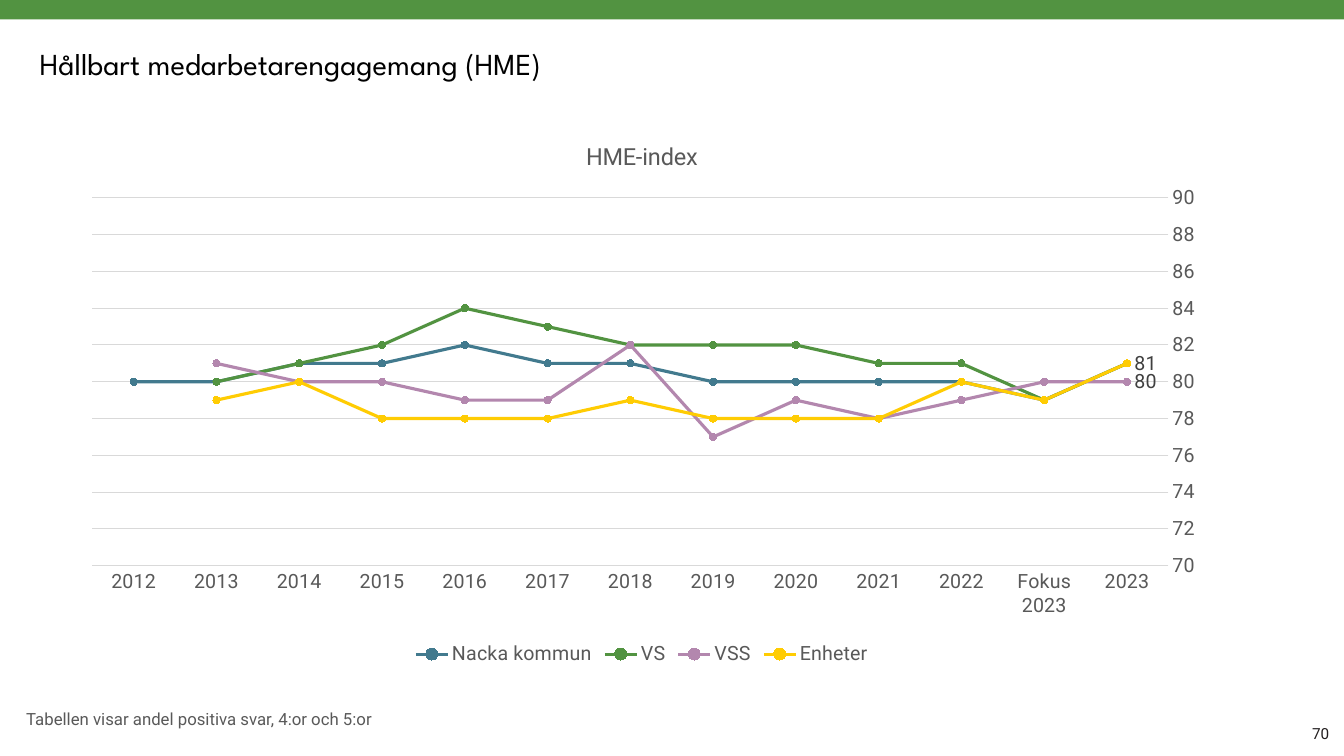
from pptx import Presentation
from pptx.chart.data import CategoryChartData
from pptx.dml.color import RGBColor
from pptx.enum.chart import (XL_CHART_TYPE, XL_LABEL_POSITION, XL_LEGEND_POSITION,
                             XL_MARKER_STYLE, XL_TICK_MARK)
from pptx.enum.shapes import MSO_SHAPE
from pptx.enum.text import MSO_ANCHOR, PP_ALIGN
from pptx.oxml import parse_xml
from pptx.oxml.ns import nsdecls
from pptx.util import Cm, Pt

COLORS = {
    "green": "529341", "blue": "427A8E", "purple": "B387AE", "yellow": "FFCC03",
    "black": "000000", "ink": "231F20", "label": "404040", "gray": "595959",
    "grid": "D9D9D9",
}
YEARS = ["2023", "Fokus 2023", *(str(year) for year in range(2022, 2011, -1))]
HME_INDEX = [
    ("Nacka kommun", "blue", [81, 79, 80, 80, 80, 80, 81, 81, 82, 81, 81, 80, 80], False),
    ("VS", "green", [81, 79, 81, 81, 82, 82, 82, 83, 84, 82, 81, 80, None], False),
    ("VSS", "purple", [80, 80, 79, 78, 79, 77, 82, 79, 79, 80, 80, 81, None], True),
    ("Enheter", "yellow", [81, 79, 80, 78, 78, 78, 79, 78, 78, 78, 80, 79, None], True),
]


class SlideBuilder:
    body_font = "Roboto"
    heading_font = "League Spartan"

    def __init__(self, slide):
        self.slide = slide

    def color(self, name):
        return RGBColor.from_string(COLORS[name])

    def style(self, font, size, color, name=None):
        font.name = name or self.body_font
        font.size = Pt(size)
        font.bold = False
        font.color.rgb = self.color(color)

    def band(self, box, color):
        band = self.slide.shapes.add_shape(MSO_SHAPE.RECTANGLE, *map(Cm, box))
        band.shadow.inherit = False
        band.fill.solid()
        band.fill.fore_color.rgb = self.color(color)
        band.line.fill.background()

    def text(self, box, words, size, color, font=None, align=PP_ALIGN.LEFT,
             anchor=MSO_ANCHOR.TOP, inset=(0, 0)):
        frame = self.slide.shapes.add_textbox(*map(Cm, box)).text_frame
        frame.word_wrap = True
        frame.vertical_anchor = anchor
        frame.margin_left = frame.margin_right = Cm(inset[0])
        frame.margin_top = frame.margin_bottom = Cm(inset[1])
        paragraph = frame.paragraphs[0]
        paragraph.alignment = align
        run = paragraph.add_run()
        run.text = words
        self.style(run.font, size, color, font)

    def axis(self, axis):
        axis.major_tick_mark = axis.minor_tick_mark = XL_TICK_MARK.NONE
        self.style(axis.tick_labels.font, 14, "gray")

    def line(self, line, color, width):
        line.color.rgb = self.color(color)
        line.width = Pt(width)

    def series(self, series, color, labelled):
        series.smooth = False
        self.line(series.format.line, color, 2.25)
        series.marker.style = XL_MARKER_STYLE.CIRCLE
        series.marker.size = 5
        series.marker.format.fill.solid()
        series.marker.format.fill.fore_color.rgb = self.color(color)
        self.line(series.marker.format.line, color, 0.75)
        if labelled:
            label = series.points[0].data_label
            self.style(label.font, 14, "label")
            label.position = XL_LABEL_POSITION.RIGHT

    def plot_area(self, chart, **area):
        for layout in chart.plots[0]._element.getparent().findall(
                "{http://schemas.openxmlformats.org/drawingml/2006/chart}layout"):
            layout.getparent().remove(layout)
        sizes = "".join(f'<c:{key} val="{value}"/>' for key, value in area.items())
        chart.plots[0]._element.getparent().insert(0, parse_xml(
            f'<c:layout {nsdecls("c")}><c:manualLayout><c:layoutTarget val="inner"/>'
            f'<c:xMode val="edge"/><c:yMode val="edge"/>{sizes}</c:manualLayout></c:layout>'))

    def line_chart(self, box, title, categories, rows):
        data = CategoryChartData(number_format="0")
        data.categories = categories
        for name, _, values, _ in rows:
            data.add_series(name, values)
        chart = self.slide.shapes.add_chart(
            XL_CHART_TYPE.LINE_MARKERS, *map(Cm, box), data).chart
        self.style(chart.font, 14, "black")

        chart.has_title = True
        run = chart.chart_title.text_frame.paragraphs[0].add_run()
        run.text = title
        self.style(run.font, 16.8, "gray")
        chart.chart_title.include_in_layout = False

        chart.has_legend = True
        chart.legend.position = XL_LEGEND_POSITION.BOTTOM
        chart.legend.include_in_layout = False
        self.style(chart.legend.font, 14, "gray")

        years, scale = chart.category_axis, chart.value_axis
        self.axis(years)
        years.reverse_order = True
        self.line(years.format.line, "grid", 0.75)
        self.axis(scale)
        scale.minimum_scale, scale.maximum_scale, scale.major_unit = 70, 90, 2
        scale.format.line.fill.background()
        self.line(scale.major_gridlines.format.line, "grid", 0.75)

        chart.plots[0].vary_by_categories = False
        for series, (_, color, _, labelled) in zip(chart.plots[0].series, rows):
            self.series(series, color, labelled)
        self.plot_area(chart, x=0.02, y=0.14, w=0.94, h=0.67)


def main():
    deck = Presentation()
    deck.slide_width, deck.slide_height = Cm(33.87), Cm(19.05)
    page = SlideBuilder(deck.slides.add_slide(deck.slide_layouts[6]))
    page.band((0, -0.05, 33.87, 0.54), "green")
    page.text((1, 1.12, 20.2, 0.94), "Hållbart medarbetarengagemang (HME)", 21.8, "black",
              font=page.heading_font, anchor=MSO_ANCHOR.MIDDLE)
    page.text((0.41, 17.73, 13.5, 1.3), "Tabellen visar andel positiva svar, 4:or och 5:or",
              12, "gray", inset=(0.25, 0.13))
    page.text((31.72, 18.26, 1.78, 0.46), "70", 10.9, "ink", align=PP_ALIGN.RIGHT)
    page.line_chart((1.75, 3.05, 28.85, 13.84), "HME-index", YEARS, HME_INDEX)
    deck.save("out.pptx")


if __name__ == "__main__":
    main()
